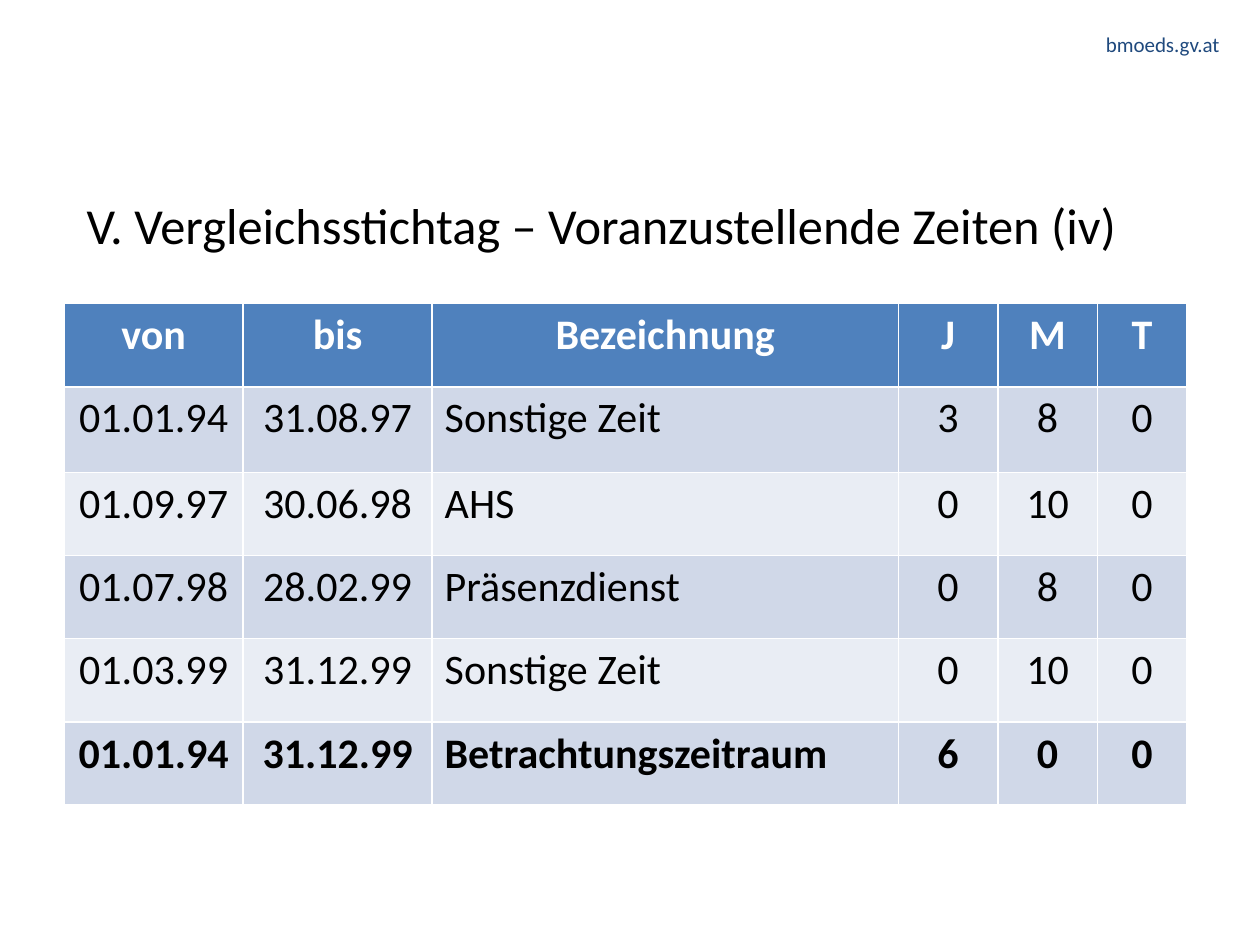
from pptx import Presentation
from pptx.dml.color import RGBColor
from pptx.enum.text import PP_ALIGN
from pptx.util import Inches, Pt

LEFT, MID, RIGHT = PP_ALIGN.LEFT, PP_ALIGN.CENTER, PP_ALIGN.RIGHT
FONT = "Calibri"
BLACK = RGBColor(0x00, 0x00, 0x00)
WHITE = RGBColor(0xFF, 0xFF, 0xFF)
NAVY = RGBColor(0x1F, 0x49, 0x7D)
BLUE = RGBColor(0x4F, 0x81, 0xBD)
BANDS = (RGBColor(0xE9, 0xED, 0xF4), RGBColor(0xD0, 0xD8, 0xE8))

COLS = (1.42, 1.5, 3.7, 0.79, 0.79, 0.71)
HIGHS = (0.66, 0.68, 0.66, 0.66, 0.66, 0.66)
ROWS = (
    ("von", "bis", "Bezeichnung", "J", "M", "T"),
    ("01.01.94", "31.08.97", "Sonstige Zeit", "3", "8", "0"),
    ("01.09.97", "30.06.98", "AHS", "0", "10", "0"),
    ("01.07.98", "28.02.99", "Präsenzdienst", "0", "8", "0"),
    ("01.03.99", "31.12.99", "Sonstige Zeit", "0", "10", "0"),
    ("01.01.94", "31.12.99", "Betrachtungszeitraum", "6", "0", "0"),
)


def write(frame, text, size, color, align=LEFT, bold=False):
    """Fill a text frame with one styled paragraph and return it."""
    para = frame.paragraphs[0]
    para.text = text
    para.alignment = align
    font = para.font
    font.name, font.size, font.bold = FONT, Pt(size), bold
    font.color.rgb = color
    return para


def add_box(slide, left, top, width, height):
    """Add a wrapping text box and return its frame."""
    box = slide.shapes.add_textbox(
        Inches(left), Inches(top), Inches(width), Inches(height))
    box.text_frame.word_wrap = True
    return box.text_frame


def add_site(slide):
    """Add the web address in the top right corner."""
    frame = add_box(slide, 7.27, 0.25, 2.41, 0.2)
    frame.margin_left = frame.margin_right = 0
    frame.margin_top = frame.margin_bottom = 0
    write(frame, "bmoeds.gv.at", 12, NAVY, RIGHT)


def add_title(slide):
    """Add the slide title."""
    frame = add_box(slide, 0.59, 1.39, 8.73, 1.15)
    text = "V. Vergleichsstichtag – Voranzustellende Zeiten (iv)"
    para = write(frame, text, 28.8, BLACK)
    para.line_spacing = Pt(42)
    props = para._p.get_or_add_pPr()
    props.set("marL", str(Inches(0.56)))
    props.set("indent", str(-Inches(0.56)))


def add_times(slide):
    """Add the table of periods with its header and total row."""
    table = slide.shapes.add_table(
        len(ROWS), len(COLS), Inches(0.51), Inches(2.41),
        Inches(sum(COLS)), Inches(sum(HIGHS))).table
    for col, width in zip(table.columns, COLS):
        col.width = Inches(width)
    for row, high in zip(table.rows, HIGHS):
        row.height = Inches(high)
    last = len(ROWS) - 1
    for r, row in enumerate(ROWS):
        head = r == 0
        for c, text in enumerate(row):
            cell = table.cell(r, c)
            cell.fill.solid()
            cell.fill.fore_color.rgb = BLUE if head else BANDS[r % 2]
            align = LEFT if c == 2 and not head else MID
            write(cell.text_frame, text, 24, WHITE if head else BLACK,
                  align, r in (0, last))


def main():
    """Build and save the slide."""
    deck = Presentation()
    deck.slide_width, deck.slide_height = Inches(10), Inches(7.5)
    slide = deck.slides.add_slide(deck.slide_layouts[6])
    add_site(slide)
    add_title(slide)
    add_times(slide)
    deck.save("out.pptx")


if __name__ == "__main__":
    main()
